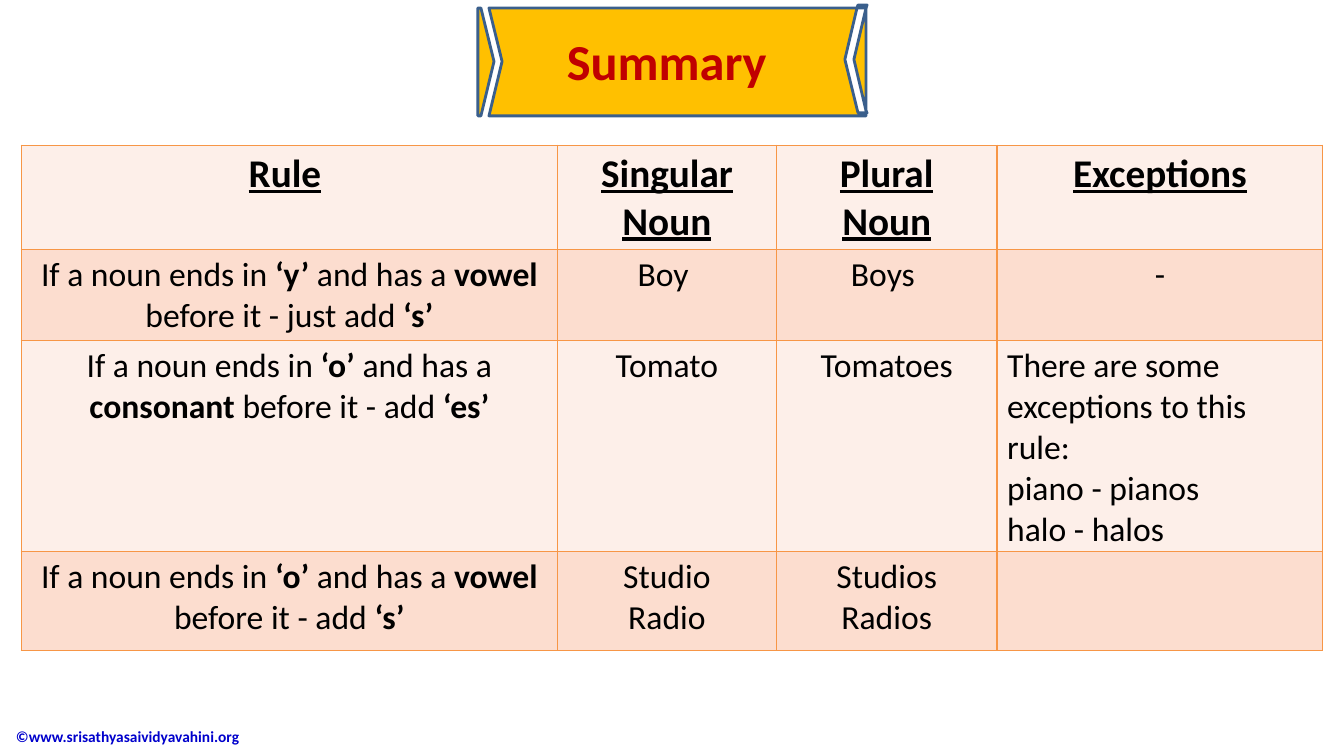
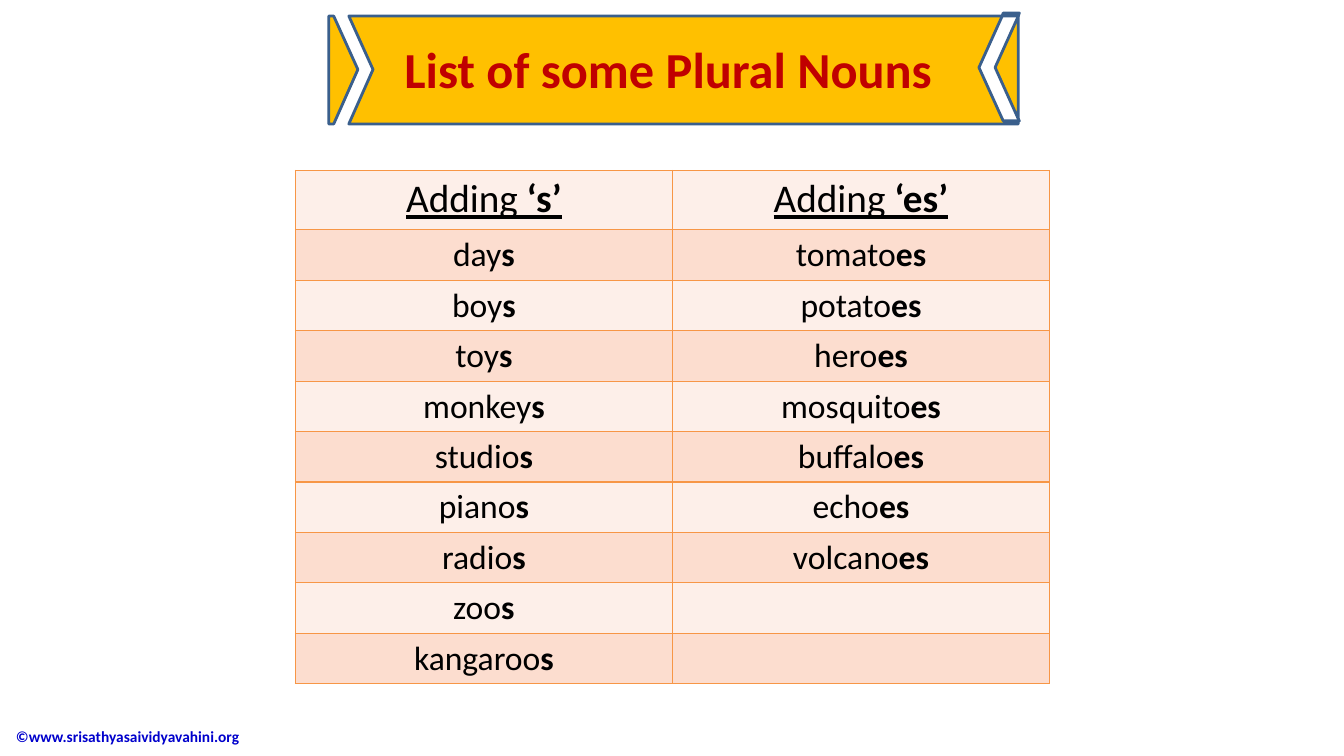
"""Builds two slides that sum up the spelling rules for plural nouns."""
from dataclasses import dataclass

from lxml.etree import SubElement as Sub
from pptx import Presentation
from pptx.dml.color import RGBColor as Rgb
from pptx.enum.text import MSO_ANCHOR as Anchor, PP_ALIGN as Align
from pptx.oxml.ns import qn
from pptx.util import Pt

PX = 9144


@dataclass(frozen=True)
class Theme:
    """Colours, font and type sizes of the deck."""
    font: str = "Calibri"
    gold: str = "FFC000"
    edge: str = "3A5F8C"
    red: str = "C00000"
    blue: str = "0000CC"
    black: str = "000000"
    rule: str = "F79646"
    bands: tuple[str, str] = ("FDEFE9", "FCDDCF")
    title: int = 36
    head: int = 28
    body: int = 24
    foot: int = 11


@dataclass(frozen=True)
class Ribbon:
    """A title banner with folded ends."""
    text: str
    left: int
    right: int
    top: int
    flap: int
    gap: int
    dip: int
    tear: int


@dataclass(frozen=True)
class Grid:
    """A banded table; asterisks mark bold text."""
    left: int
    top: int
    cols: tuple[int, ...]
    rows: tuple[int, ...]
    cells: tuple[tuple[str, ...], ...]
    flush: tuple[tuple[int, int], ...] = ()


THEME = Theme()
FOOTER = "©www.srisathyasaividyavahini.org"

RULES = Grid(21, 144, (532, 217, 219, 323), (101, 88, 205, 98), (
    ("*Rule* ", "*Singular Noun*", "*Plural*\n*Noun*", "*Exceptions*"),
    ("If a noun ends in *‘y’* and has a *vowel* before it - just add *‘s’*",
     "Boy ", "Boys ", "-"),
    ("If a noun ends in *‘o’* and has a *consonant* before it - add *‘es’*",
     "Tomato", "Tomatoes",
     "There are some exceptions to this rule:\npiano - pianos\nhalo - halos"),
    ("If a noun ends in *‘o’* and has a *vowel* before it - add *‘s’*",
     "Studio\nRadio", "Studios\nRadios", ""),
), flush=((2, 3),))

NOUNS = Grid(293, 169, (374, 374), (59,) + (47,) * 9, (
    ("Adding* ‘s’*", "Adding *‘es’*"),
    ("day*s*", "tomato*es*"),
    ("boy*s*", "potato*es*"),
    ("toy*s*", "hero*es*"),
    ("monkey*s*", "mosquito*es*"),
    ("studio*s*", "buffalo*es*"),
    ("piano*s*", "echo*es*"),
    ("radio*s*", "volcano*es*"),
    ("zoo*s*", ""),
    ("kangaroo*s*", ""),
))

PAGES = (
    (Ribbon("Summary ", 474, 859, 8, 3, 11, 13, 9), RULES),
    (Ribbon("List of some Plural Nouns ", 326, 1010, 16, 5, 20, 24, 16), NOUNS),
)


def style(font, size: int, color: str, bold: bool) -> None:
    """Set the look of a font."""
    font.name = THEME.font
    font.size = Pt(size)
    font.bold = bold
    font.color.rgb = Rgb.from_string(color)


def outline(band: Ribbon) -> list[list[tuple[int, int]]]:
    """Return the closed outlines of a banner."""
    lo, hi, top = band.left, band.right, band.top
    mid, low, end = top + 53, top + 104, top + 107
    flap, body, slit = lo + band.flap, lo + band.gap, hi - band.tear
    fold = band.dip - 1
    return [
        [(hi, top + 102), (hi + 1, low), (hi, low)],
        [(hi, top), (hi, top + 102), (hi - fold, top + 51)],
        [(body, top), (slit, top), (slit - fold, top + 51), (slit + 1, low),
         (hi, low), (hi, end), (body, end), (body + band.dip, mid)],
        [(lo, top), (flap, top), (flap + band.dip, mid), (flap, end), (lo, end)],
        [(slit + 1, top - 3), (hi + 1, top - 3), (hi, top), (slit, top)],
    ]


def draw_band(slide, band: Ribbon) -> None:
    """Draw a title banner."""
    parts = outline(band)
    pen = slide.shapes.build_freeform(*parts[0][0], scale=PX)
    for num, part in enumerate(parts):
        if num:
            pen.move_to(*part[0])
        pen.add_line_segments(part[1:], close=True)
    shape = pen.convert_to_shape()
    shape.shadow.inherit = False
    shape.fill.solid()
    shape.fill.fore_color.rgb = Rgb.from_string(THEME.gold)
    shape.line.color.rgb = Rgb.from_string(THEME.edge)
    shape.line.width = Pt(2)
    frame = shape.text_frame
    frame.text = band.text
    frame.word_wrap = True
    frame.vertical_anchor = Anchor.MIDDLE
    para = frame.paragraphs[0]
    para.alignment = Align.CENTER
    style(para.runs[0].font, THEME.title, THEME.red, True)


def add_edges(cell) -> None:
    """Give a cell its four borders."""
    props = cell._tc.get_or_add_tcPr()
    for side in "LRTB":
        line = Sub(props, qn(f"a:ln{side}"), w=str(Pt(1)))
        Sub(Sub(line, qn("a:solidFill")), qn("a:srgbClr"), val=THEME.rule)


def fill_cell(cell, text: str, head: bool, align: Align) -> None:
    """Write marked text into a cell."""
    frame = cell.text_frame
    frame.text = text
    size = THEME.head if head else THEME.body
    for para in frame.paragraphs:
        parts = para.text.split("*")
        para.text = ""
        para.alignment = align
        for num, part in enumerate(parts):
            if part:
                run = para.add_run()
                run.text = part
                style(run.font, size, THEME.black, num % 2 == 1)
                run.font.underline = head and bool(part.strip())


def draw_grid(slide, grid: Grid) -> None:
    """Draw a banded table."""
    box = (grid.left, grid.top, sum(grid.cols), sum(grid.rows))
    table = slide.shapes.add_table(
        len(grid.rows), len(grid.cols), *(n * PX for n in box)).table
    table.first_row = table.horz_banding = False
    for col, wide in zip(table.columns, grid.cols):
        col.width = wide * PX
    for row, high in zip(table.rows, grid.rows):
        row.height = high * PX
    for y, texts in enumerate(grid.cells):
        for x, text in enumerate(texts):
            cell = table.cell(y, x)
            add_edges(cell)
            cell.fill.solid()
            cell.fill.fore_color.rgb = Rgb.from_string(THEME.bands[y % 2])
            align = Align.LEFT if (y, x) in grid.flush else Align.CENTER
            fill_cell(cell, text, y == 0, align)


def draw_foot(slide) -> None:
    """Write the footer line."""
    box = slide.shapes.add_textbox(*(n * PX for n in (6, 710, 353, 41)))
    frame = box.text_frame
    frame.text = FOOTER
    frame.word_wrap = True
    frame.vertical_anchor = Anchor.MIDDLE
    style(frame.paragraphs[0].runs[0].font, THEME.foot, THEME.blue, True)


def main() -> None:
    """Build and save the deck."""
    deck = Presentation()
    deck.slide_width, deck.slide_height = 1333 * PX, 750 * PX
    for band, grid in PAGES:
        slide = deck.slides.add_slide(deck.slide_layouts[6])
        draw_foot(slide)
        draw_band(slide, band)
        draw_grid(slide, grid)
    deck.save("out.pptx")


if __name__ == "__main__":
    main()
